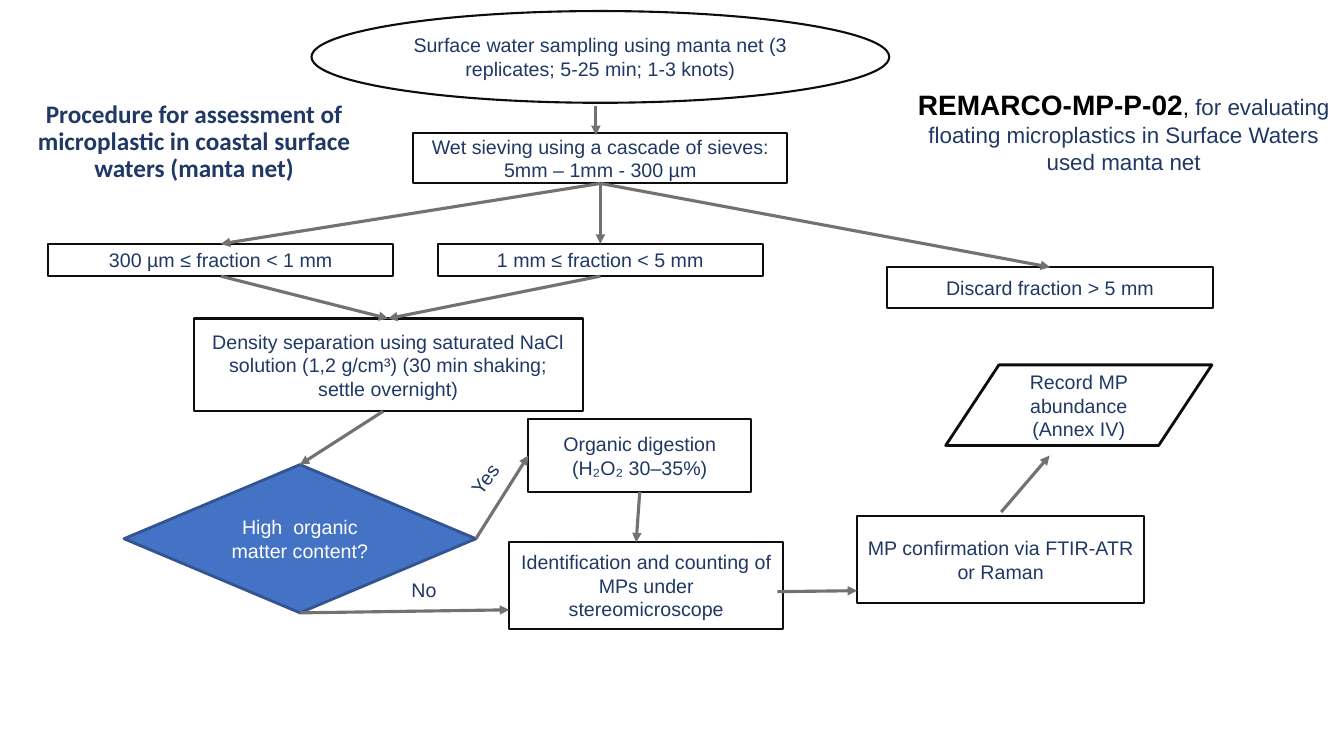
from dataclasses import dataclass
from typing import Any, NamedTuple, Optional, Union

from lxml import etree
from pptx import Presentation
from pptx.dml.color import RGBColor
from pptx.enum.shapes import MSO_CONNECTOR, MSO_SHAPE
from pptx.enum.text import MSO_ANCHOR, MSO_AUTO_SIZE, PP_ALIGN
from pptx.oxml.ns import qn
from pptx.shapes.autoshape import Shape
from pptx.slide import Slide
from pptx.util import Inches, Pt

RECTANGLE = MSO_SHAPE.RECTANGLE
ELLIPSE = MSO_SHAPE.OVAL
DIAMOND = MSO_SHAPE.DIAMOND
DATA = MSO_SHAPE.FLOWCHART_DATA
STRAIGHT = MSO_CONNECTOR.STRAIGHT
CENTER = PP_ALIGN.CENTER
MIDDLE, TOP_ANCHOR = MSO_ANCHOR.MIDDLE, MSO_ANCHOR.TOP
NO_FIT, GROW = MSO_AUTO_SIZE.NONE, MSO_AUTO_SIZE.SHAPE_TO_FIT_TEXT
TOP, LEFT, BOTTOM, RIGHT = range(4)


@dataclass(frozen=True)
class Theme:
    navy: str = "203864"
    black: str = "000000"
    white: str = "FFFFFF"
    outline: str = "0D0D0D"
    arrow: str = "767171"
    decision: str = "4472C4"
    decision_edge: str = "325491"
    body_font: str = "Arial"
    title_font: str = "Calibri"
    body_size: float = 14
    note_size: float = 16
    title_size: float = 18
    code_size: float = 20
    thin: float = 1.5
    thick: float = 2
    arrow_width: float = 2.25


THEME = Theme()


class Box(NamedTuple):
    left: float
    top: float
    width: float
    height: float


class Point(NamedTuple):
    x: float
    y: float


class Side(NamedTuple):
    step: str
    site: int


class Arrow(NamedTuple):
    start: Union[Point, Side]
    end: Union[Point, Side]


@dataclass(frozen=True)
class TextRun:
    text: str
    size: float = THEME.body_size
    color: str = THEME.navy
    font: str = THEME.body_font
    bold: bool = False


@dataclass(frozen=True)
class Step:
    name: str
    box: Box
    text: str
    kind: Any = RECTANGLE
    fill: Optional[str] = None
    line: str = THEME.outline
    line_width: float = THEME.thin
    color: str = THEME.navy


@dataclass(frozen=True)
class Label:
    box: Box
    runs: tuple[TextRun, ...]
    rotation: float = 0
    wrap: bool = True
    anchor: Any = TOP_ANCHOR
    auto_size: Any = GROW
    line_spacing: float = 1.0


STEPS = [
    Step("sampling", Box(3.09, 0.11, 5.73, 0.91),
         "Surface water sampling using manta net (3 replicates; 5-25 min; 1-3 knots)", ELLIPSE),
    Step("sieving", Box(4.1, 1.32, 3.71, 0.5),
         "Wet sieving using a cascade of sieves: 5mm – 1mm - 300 µm"),
    Step("fine", Box(0.48, 2.42, 3.42, 0.32), "300 µm ≤ fraction < 1 mm"),
    Step("coarse", Box(4.34, 2.42, 3.23, 0.32), "1 mm ≤ fraction < 5 mm"),
    Step("discard", Box(8.8, 2.65, 3.23, 0.41), "Discard fraction > 5 mm"),
    Step("density", Box(1.92, 3.16, 3.86, 0.92),
         "Density separation using saturated NaCl solution (1,2 g/cm³) "
         "(30 min shaking; settle overnight)"),
    Step("digestion", Box(5.24, 4.16, 2.21, 0.72), "Organic digestion (H₂O₂ 30–35%)"),
    Step("counting", Box(5.05, 5.38, 2.72, 0.86),
         "Identification and counting of MPs under stereomicroscope"),
    Step("record", Box(9.38, 3.62, 2.64, 0.8), "Record MP abundance (Annex IV)",
         DATA, THEME.white, line_width=THEME.thick),
    Step("decision", Box(1.23, 4.61, 3.49, 1.47), "High  organic matter content?",
         DIAMOND, THEME.decision, THEME.decision_edge, THEME.thick, THEME.white),
    Step("confirmation", Box(8.5, 5.12, 2.85, 0.86), "MP confirmation via FTIR-ATR or Raman"),
]

ARROWS = [
    Arrow(Point(5.91, 1.05), Point(5.91, 1.34)),
    Arrow(Side("sieving", BOTTOM), Side("fine", TOP)),
    Arrow(Side("sieving", BOTTOM), Side("coarse", TOP)),
    Arrow(Side("sieving", BOTTOM), Side("discard", TOP)),
    Arrow(Side("coarse", BOTTOM), Side("density", TOP)),
    Arrow(Side("fine", BOTTOM), Side("density", TOP)),
    Arrow(Point(3.8, 4.08), Side("decision", TOP)),
    Arrow(Side("decision", RIGHT), Side("digestion", LEFT)),
    Arrow(Side("decision", BOTTOM), Point(5.05, 6.05)),
    Arrow(Side("digestion", BOTTOM), Point(6.31, 5.38)),
    Arrow(Point(7.71, 5.87), Point(8.5, 5.86)),
    Arrow(Point(9.93, 5.08), Point(10.41, 4.52)),
]

LABELS = [
    Label(Box(0.22, 0.98, 3.41, 0.86),
          (TextRun("Procedure for assessment of microplastic in coastal surface waters (manta net)",
                   THEME.title_size, font=THEME.title_font, bold=True),),
          anchor=MIDDLE, auto_size=NO_FIT, line_spacing=0.9),
    Label(Box(8.96, 0.82, 4.37, 0.98),
          (TextRun("REMARCO-MP-P-02", THEME.code_size, THEME.black, bold=True),
           TextRun(", ", THEME.note_size, THEME.black),
           TextRun("for evaluating floating microplastics in Surface Waters used manta net",
                   THEME.note_size))),
    Label(Box(4.57, 4.57, 0.53, 0.4), (TextRun("Yes"),), rotation=307, wrap=False),
    Label(Box(3.95, 5.68, 0.51, 0.4), (TextRun("No"),)),
]


def apply_format(target: Any, values: dict[str, Any]) -> None:
    for name, value in values.items():
        setattr(target, name, value)


def write_text(shape: Shape, runs: tuple[TextRun, ...], frame_format: dict[str, Any],
               line_spacing: float = 1.0) -> None:
    apply_format(shape.text_frame, frame_format)
    paragraph = shape.text_frame.paragraphs[0]
    apply_format(paragraph, {"alignment": CENTER, "line_spacing": line_spacing})
    for text_run in runs:
        run = paragraph.add_run()
        run.text = text_run.text
        apply_format(run.font, {"name": text_run.font, "size": Pt(text_run.size),
                                "bold": text_run.bold})
        run.font.color.rgb = RGBColor.from_string(text_run.color)


def draw_step(slide: Slide, step: Step) -> Shape:
    shape = slide.shapes.add_shape(step.kind, *map(Inches, step.box))
    shape.shadow.inherit = False
    if step.fill:
        shape.fill.solid()
        shape.fill.fore_color.rgb = RGBColor.from_string(step.fill)
    else:
        shape.fill.background()
    shape.line.color.rgb = RGBColor.from_string(step.line)
    shape.line.width = Pt(step.line_width)
    write_text(shape, (TextRun(step.text, color=step.color),),
               {"word_wrap": True, "vertical_anchor": MIDDLE})
    return shape


def draw_arrow(slide: Slide, arrow: Arrow, shapes: dict[str, Shape]) -> None:
    ends = [Point(0, 0) if isinstance(end, Side) else end for end in arrow]
    connector = slide.shapes.add_connector(
        STRAIGHT, *(Inches(value) for end in ends for value in end))
    for end, connect in zip(arrow, (connector.begin_connect, connector.end_connect)):
        if isinstance(end, Side):
            connect(shapes[end.step], end.site)
    connector.line.color.rgb = RGBColor.from_string(THEME.arrow)
    connector.line.width = Pt(THEME.arrow_width)
    # Arrowhead, and an empty effect list against the shadow
    properties = connector.line._get_or_add_ln()
    etree.SubElement(properties, qn("a:tailEnd"), type="triangle")
    etree.SubElement(properties.getparent(), qn("a:effectLst"))


def draw_label(slide: Slide, label: Label) -> None:
    text_box = slide.shapes.add_textbox(*map(Inches, label.box))
    text_box.rotation = label.rotation
    write_text(text_box, label.runs,
               {"word_wrap": label.wrap, "vertical_anchor": label.anchor,
                "auto_size": label.auto_size}, label.line_spacing)


def main() -> None:
    presentation = Presentation()
    apply_format(presentation, {"slide_width": Inches(13.33), "slide_height": Inches(7.5)})
    slide = presentation.slides.add_slide(presentation.slide_layouts[6])

    # Flowchart steps, then the arrows joining them
    shapes = {step.name: draw_step(slide, step) for step in STEPS}
    for arrow in ARROWS:
        draw_arrow(slide, arrow, shapes)

    # Headings and branch labels
    for label in LABELS:
        draw_label(slide, label)

    presentation.save("out.pptx")


if __name__ == "__main__":
    main()
